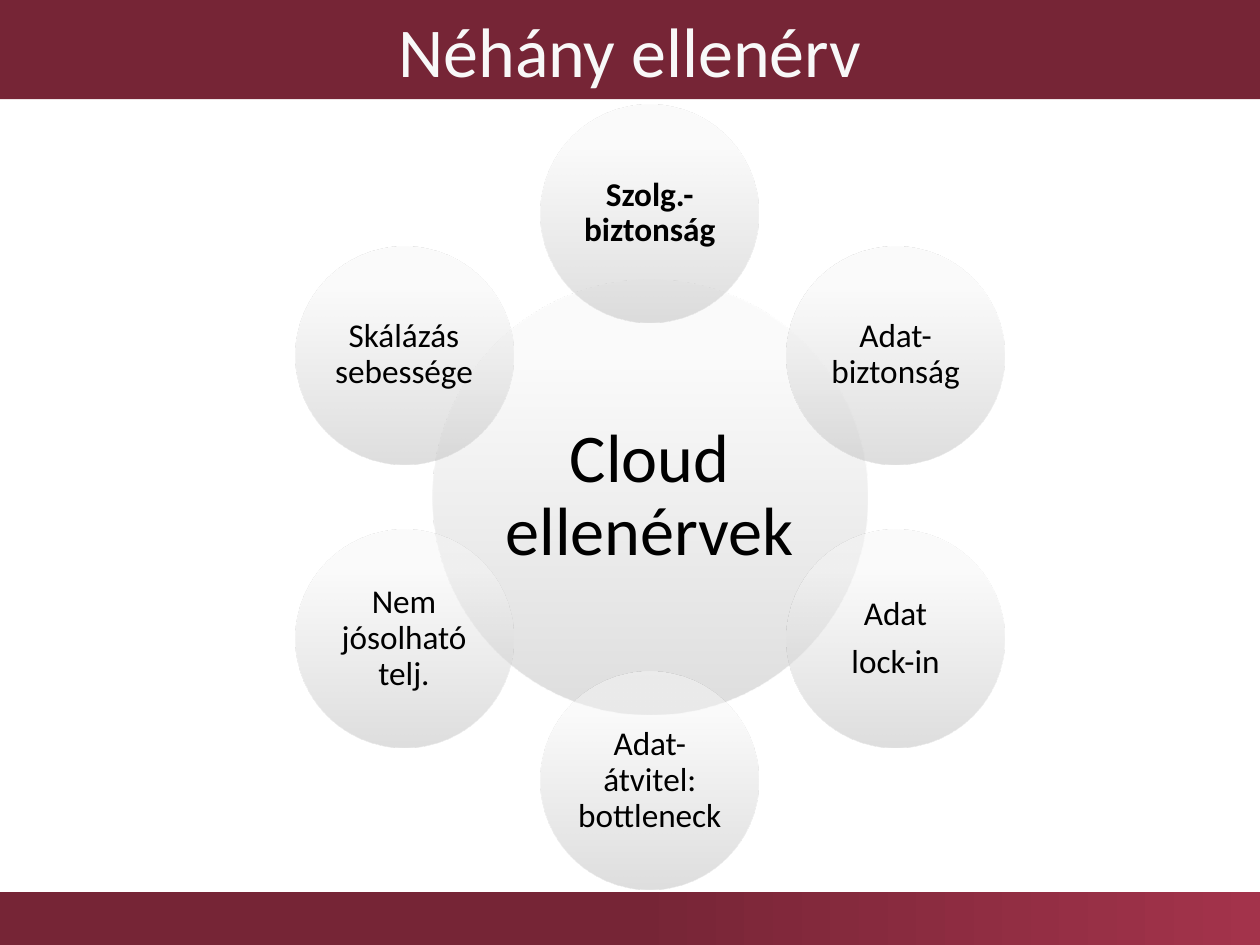
import math
from dataclasses import dataclass

import pptx
import pptx.dml.color
import pptx.enum.shapes
import pptx.enum.text
import pptx.oxml
import pptx.oxml.ns
import pptx.util

Cm = pptx.util.Cm
Pt = pptx.util.Pt
SHAPES = pptx.enum.shapes.MSO_SHAPE


@dataclass(frozen=True)
class Theme:
    """Colours, font and type sizes of the slide."""

    font: str = "Calibri"
    burgundy: str = "762536"
    title_ink: str = "F8F8F8"
    ink: str = "000000"
    bar_stops: tuple = ((0, "762536", 100), (50, "762536", 100), (100, "A3334B", 100))
    bubble_stops: tuple = ((0, "BEBEBE", 50), (80, "F7F7F7", 50), (100, "F8F8F8", 50))
    title_size: int = 40
    hub_size: int = 39
    bubble_size: int = 19


THEME = Theme()
WIDTH, HEIGHT = 25.4, 19.05
CENTRE_X, CENTRE_Y = 13.1, 10.02
ORBIT = 5.72
HUB_DIAMETER, BUBBLE_DIAMETER = 8.76, 4.39
BUBBLES = (
    "Szolg.-biztonság",
    "Adat-biztonság",
    "Adat\nlock-in",
    "Adat-átvitel: bottleneck",
    "Nem jósolható telj.",
    "Skálázás sebessége",
)


def add_plain_shape(slide, kind, left, top, width, height):
    """Add a preset shape without shadow, line or fill."""
    shape = slide.shapes.add_shape(kind, Cm(left), Cm(top), Cm(width), Cm(height))
    shape.shadow.inherit = False
    shape.line.fill.background()
    shape.fill.background()
    return shape


def set_gradient(shape, stops, angle):
    """Fill a shape with a linear gradient of (position, colour, opacity) stops."""
    listed = "".join(
        f'<a:gs pos="{position * 1000}"><a:srgbClr val="{colour}">'
        f'<a:alpha val="{opacity * 1000}"/></a:srgbClr></a:gs>'
        for position, colour, opacity in stops
    )
    gradient = pptx.oxml.parse_xml(
        f'<a:gradFill {pptx.oxml.ns.nsdecls("a")} rotWithShape="1">'
        f'<a:gsLst>{listed}</a:gsLst><a:lin ang="{angle * 60000}" scaled="0"/></a:gradFill>'
    )
    properties = shape.element.spPr
    properties.replace(properties.find(pptx.oxml.ns.qn("a:noFill")), gradient)


def set_text(shape, text, size, colour, bold=False):
    """Write centred text into a shape and format its paragraphs."""
    frame = shape.text_frame
    frame.word_wrap = True
    frame.vertical_anchor = pptx.enum.text.MSO_ANCHOR.MIDDLE
    frame.text = text
    for para in frame.paragraphs:
        para.alignment = pptx.enum.text.PP_ALIGN.CENTER
        for span in para.runs:
            span.font.name = THEME.font
            span.font.size = Pt(size)
            span.font.bold = bold
            span.font.color.rgb = pptx.dml.color.RGBColor.from_string(colour)


def add_title_bar(slide, text):
    """Add the solid bar with the slide title."""
    bar = add_plain_shape(slide, SHAPES.RECTANGLE, 0, 0, WIDTH, 2)
    bar.fill.solid()
    bar.fill.fore_color.rgb = pptx.dml.color.RGBColor.from_string(THEME.burgundy)
    set_text(bar, text, THEME.title_size, THEME.title_ink)


def add_footer_bar(slide):
    """Add the gradient bar along the bottom edge."""
    top = 17.98
    bar = add_plain_shape(slide, SHAPES.RECTANGLE, 0, top, WIDTH, HEIGHT - top)
    set_gradient(bar, THEME.bar_stops, 0)


def add_bubble(slide, x, y, diameter, text, size, inset, bold=False):
    """Add a translucent labelled circle centred on a point."""
    bubble = add_plain_shape(
        slide, SHAPES.OVAL, x - diameter / 2, y - diameter / 2, diameter, diameter
    )
    set_gradient(bubble, THEME.bubble_stops, 270)
    set_text(bubble, text, size, THEME.ink, bold)
    frame = bubble.text_frame
    frame.margin_left = frame.margin_right = Cm(inset)
    frame.margin_top = frame.margin_bottom = Cm(inset)
    for para in frame.paragraphs:
        para.line_spacing = 0.9
        para.space_after = Pt(0.35 * size)


def add_radial_diagram(slide):
    """Add the hub and the ring of bubbles, clockwise from the top."""
    add_bubble(
        slide, CENTRE_X, CENTRE_Y, HUB_DIAMETER, "Cloud ellenérvek", THEME.hub_size, 0.13
    )
    for index, label in enumerate(BUBBLES):
        angle = math.tau * index / len(BUBBLES)
        x = CENTRE_X + ORBIT * math.sin(angle)
        y = CENTRE_Y - ORBIT * math.cos(angle)
        add_bubble(
            slide, x, y, BUBBLE_DIAMETER, label, THEME.bubble_size, 0.08, bold=index == 0
        )


def main():
    """Build the slide and save the deck."""
    deck = pptx.Presentation()
    deck.slide_width, deck.slide_height = Cm(WIDTH), Cm(HEIGHT)
    page = deck.slides.add_slide(deck.slide_layouts[6])
    add_footer_bar(page)
    add_title_bar(page, "Néhány ellenérv")
    add_radial_diagram(page)
    deck.save("out.pptx")


if __name__ == "__main__":
    main()
